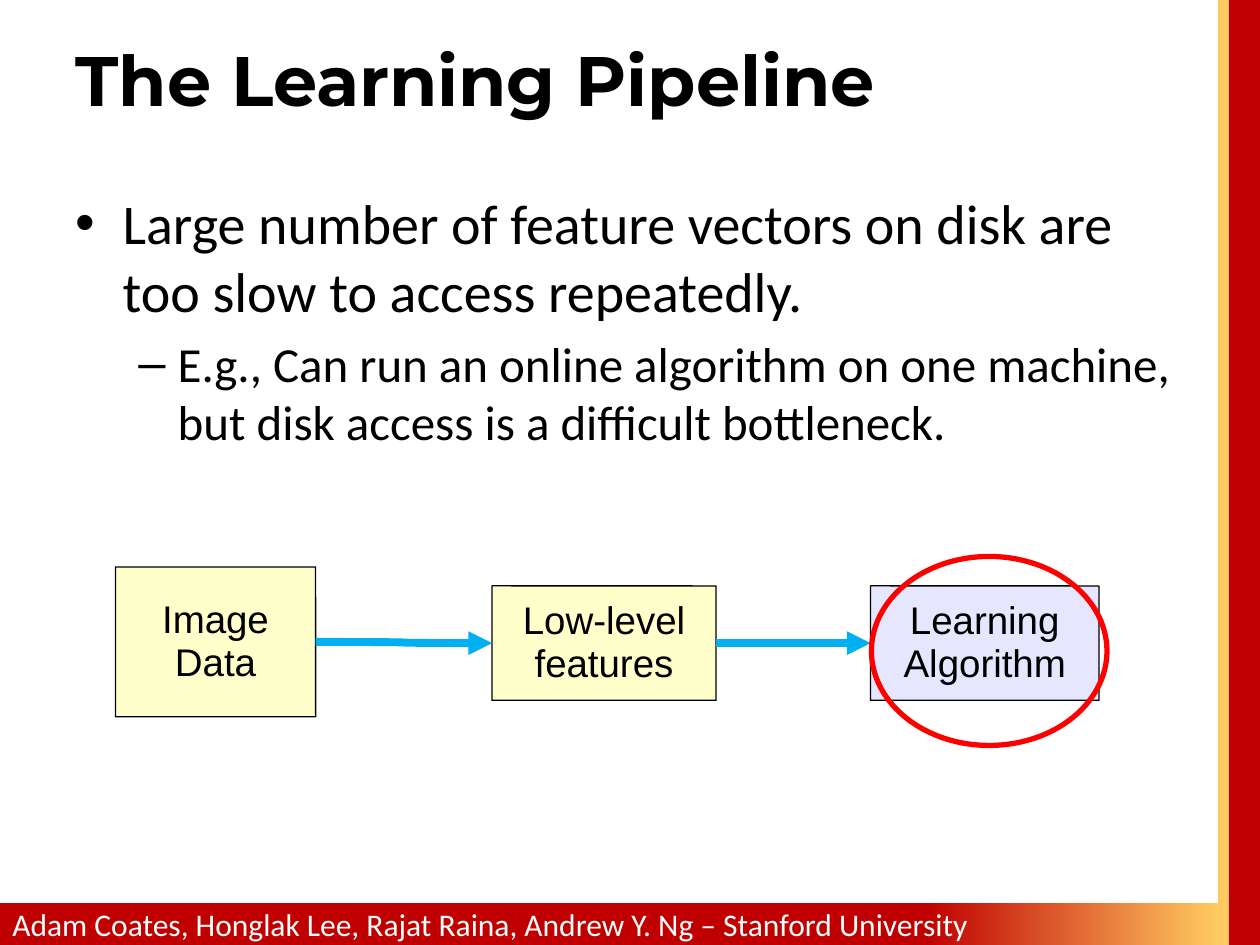
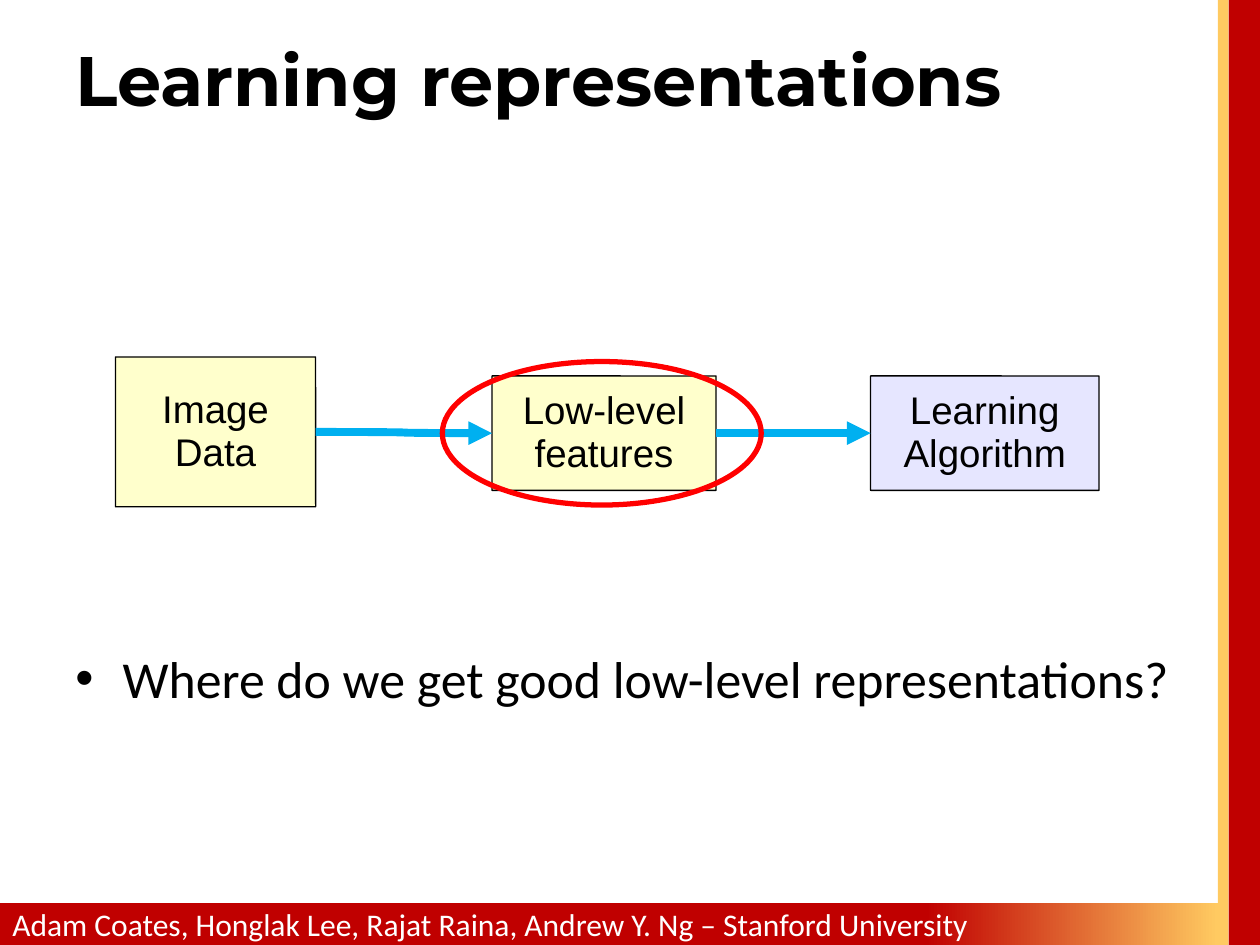
"""Builds two slides about a learning pipeline, with a shared frame and flow diagram."""
from lxml import etree
from pptx import Presentation
from pptx.dml.color import RGBColor
from pptx.enum.shapes import MSO_CONNECTOR, MSO_SHAPE
from pptx.enum.text import MSO_ANCHOR, PP_ALIGN
from pptx.oxml.ns import qn
from pptx.util import Pt

RECT, ROUND, OVAL = MSO_SHAPE.RECTANGLE, MSO_SHAPE.ROUNDED_RECTANGLE, MSO_SHAPE.OVAL
CURVE = MSO_CONNECTOR.CURVE
LEFT, CENTER = PP_ALIGN.LEFT, PP_ALIGN.CENTER
TOP, MIDDLE = MSO_ANCHOR.TOP, MSO_ANCHOR.MIDDLE
LEFT_SIDE, RIGHT_SIDE = 1, 3

COLORS = {
    "black": "000000", "white": "FFFFFF", "band": "C00000", "gold": "FFCA61",
    "data": "FFFFCC", "algorithm": "E6E6FF", "arrow": "00B0F0", "mark": "FF0000",
}
FOOTER = "Adam Coates, Honglak Lee, Rajat Raina, Andrew Y. Ng – Stanford University"
LEVELS = [("•", 27, -27), ("–", 58.5, -22.5)]


def rgb(name):
    return RGBColor.from_string(COLORS[name])


def write(tf, text, size, font="Calibri", color="black", bold=False, align=LEFT,
          anchor=MIDDLE, spacing=None, before=None, levels=None):
    tf.word_wrap = True
    tf.vertical_anchor = anchor
    for i, line in enumerate(text.split("\n")):
        p = tf.add_paragraph() if i else tf.paragraphs[0]
        p.alignment = align
        if spacing:
            p.line_spacing = spacing
        r = p.add_run()
        r.text = line
        r.font.name, r.font.bold = font, bold
        r.font.size = Pt(size[i] if levels else size)
        r.font.color.rgb = rgb(color)
        if levels:
            p.space_before = Pt(round(size[i] * before, 1))
            char, margin, indent = LEVELS[levels[i]]
            pPr = p._p.get_or_add_pPr()
            pPr.set("marL", str(Pt(margin)))
            pPr.set("indent", str(Pt(indent)))
            etree.SubElement(pPr, qn("a:buFont"), typeface="Arial")
            etree.SubElement(pPr, qn("a:buChar"), char=char)


class Deck:
    """Holds the presentation style and the current slide."""

    def __init__(self):
        self.prs = Presentation()
        self.prs.slide_width, self.prs.slide_height = Pt(720), Pt(540)
        self.s = None

    def slide(self, title):
        self.s = self.prs.slides.add_slide(self.prs.slide_layouts[6])
        self.shape(RECT, 702, 0, 18, 540, fill="band")
        self.shape(RECT, 696, 0, 6, 540, fill="gold")
        footer = self.shape(RECT, 0, 516, 696, 24)
        footer.fill.gradient()
        footer.fill.gradient_angle = 0
        for stop, (at, color) in zip(footer.fill.gradient_stops,
                                     [(0.76, "band"), (1, "gold")]):
            stop.position = at
            stop.color.rgb = rgb(color)
        write(footer.text_frame, FOOTER, 18, color="white")
        self.text(0, 90, title, 40, font="Montserrat", bold=True)

    def shape(self, kind, x, y, w, h, fill=None, line=None, width=0.75):
        sp = self.s.shapes.add_shape(kind, Pt(x), Pt(y), Pt(w), Pt(h))
        sp.shadow.inherit = False
        if fill:
            sp.fill.solid()
            sp.fill.fore_color.rgb = rgb(fill)
        else:
            sp.fill.background()
        if line:
            sp.line.color.rgb = rgb(line)
            sp.line.width = Pt(width)
        else:
            sp.line.fill.background()
        return sp

    def text(self, y, h, text, size, **fmt):
        sp = self.s.shapes.add_textbox(Pt(36), Pt(y), Pt(648), Pt(h))
        write(sp.text_frame, text, size, **fmt)

    def bullets(self, y, h, text, size, levels):
        self.text(y, h, text, size, anchor=TOP, before=0.2, levels=levels)

    def box(self, x, mid, w, h, text, fill):
        sp = self.shape(ROUND, x, mid - h / 2, w, h, fill=fill, line="black")
        sp.adjustments[0] = 0.002
        tf = sp.text_frame
        tf.margin_left = tf.margin_right = Pt(6.5)
        tf.margin_top = tf.margin_bottom = Pt(3)
        write(tf, text, 22, font="Arial", align=CENTER, spacing=0.93)
        return sp

    def arrow(self, start, end):
        c = self.s.shapes.add_connector(CURVE, 0, 0, 0, 0)
        c.begin_connect(start, RIGHT_SIDE)
        c.end_connect(end, LEFT_SIDE)
        c.line.color.rgb = rgb("arrow")
        c.line.width = Pt(4.5)
        etree.SubElement(c.line._get_or_add_ln(), qn("a:tailEnd"), type="triangle")
        etree.SubElement(c._element.spPr, qn("a:effectLst"))

    def pipeline(self, mid):
        image = self.box(66, mid - 0.7, 114.4, 85.6, "Image\nData", "data")
        learning = self.box(497.5, mid, 130.5, 65.4, "Learning\nAlgorithm", "algorithm")
        features = self.box(281.2, mid, 128, 65.4, "Low-level features", "data")
        self.arrow(image, features)
        self.arrow(features, learning)

    def ring(self, x, y, w, h):
        self.shape(OVAL, x, y, w, h, line="mark", width=3)


def main():
    deck = Deck()

    deck.slide("The Learning Pipeline")
    deck.pipeline(367.5)
    deck.ring(498, 318, 134.6, 108)
    deck.bullets(104.4, 225.4,
                 "Large number of feature vectors on disk are too slow to access repeatedly.\n"
                 "E.g., Can run an online algorithm on one machine, "
                 "but disk access is a difficult bottleneck.", [32, 28], [0, 1])

    deck.slide("Learning representations")
    deck.pipeline(247.5)
    deck.ring(252.8, 206.6, 182.2, 82)
    deck.bullets(365.8, 58.3, "Where do we get good low-level representations?", [29.6], [0])

    deck.prs.save("out.pptx")


if __name__ == "__main__":
    main()
